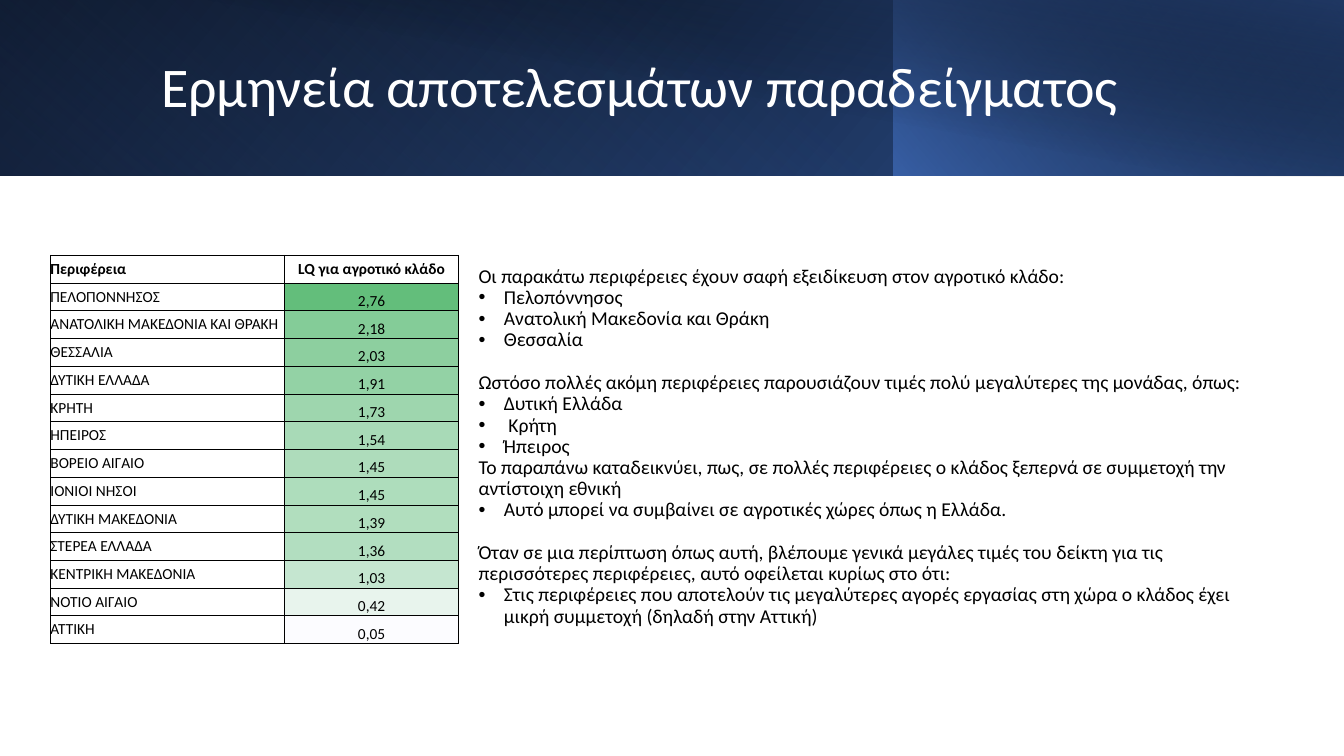
"""Build the slide that interprets the location quotient results."""
from lxml import etree
from pptx import Presentation
from pptx import util as u
from pptx.dml.color import RGBColor
from pptx.enum import shapes, text
from pptx.oxml.ns import qn

FONT = "Calibri"
WIDTH, HEIGHT = 33.87, 19.05
ROW_HEIGHT = 0.7
COLUMN_WIDTHS = (5.9, 4.39)

BANDS = [
    # left, width, height, rotation, flipped, angle, (position, colour, opacity)
    (0, WIDTH, 4.42, 0, True, 140, [(0, "000000", 100), (100, "2F5597", 100)]),
    (0, 22.55, 4.42, 180, True, 230, [(20, "4472C4", 0), (100, "203864", 55)]),
    (22.53, 11.34, 4.42, 0, True, 220, [(0, "4472C4", 66), (100, "000000", 30)]),
    (1.27, 32.6, 4.44, 0, False, 280, [(50, "000000", 0), (99, "203864", 52)]),
]

REGIONS = [
    ("ΠΕΛΟΠΟΝΝΗΣΟΣ", "2,76", "63BE7B"),
    ("ΑΝΑΤΟΛΙΚΗ ΜΑΚΕΔΟΝΙΑ ΚΑΙ ΘΡΑΚΗ", "2,18", "84CC98"),
    ("ΘΕΣΣΑΛΙΑ", "2,03", "8DCF9F"),
    ("ΔΥΤΙΚΗ ΕΛΛΑΔΑ", "1,91", "93D2A5"),
    ("ΚΡΗΤΗ", "1,73", "9ED6AE"),
    ("ΗΠΕΙΡΟΣ", "1,54", "A8DAB7"),
    ("ΒΟΡΕΙΟ ΑΙΓΑΙΟ", "1,45", "AEDCBB"),
    ("ΙΟΝΙΟΙ ΝΗΣΟΙ", "1,45", "AEDDBC"),
    ("ΔΥΤΙΚΗ ΜΑΚΕΔΟΝΙΑ", "1,39", "B1DEBE"),
    ("ΣΤΕΡΕΑ ΕΛΛΑΔΑ", "1,36", "B2DEC0"),
    ("ΚΕΝΤΡΙΚΗ ΜΑΚΕΔΟΝΙΑ", "1,03", "C5E6D0"),
    ("ΝΟΤΙΟ ΑΙΓΑΙΟ", "0,42", "E8F4ED"),
    ("ΑΤΤΙΚΗ", "0,05", "FCFCFF"),
]

FINDINGS = [
    ("Οι παρακάτω περιφέρειες έχουν σαφή εξειδίκευση στον αγροτικό κλάδο:",
     ["Πελοπόννησος", "Ανατολική Μακεδονία και Θράκη", "Θεσσαλία"], 0),
    ("Ωστόσο πολλές ακόμη περιφέρειες παρουσιάζουν τιμές πολύ μεγαλύτερες της μονάδας, όπως:",
     ["Δυτική Ελλάδα", " Κρήτη", "Ήπειρος"], 15.4),
    ("Το παραπάνω καταδεικνύει, πως, σε πολλές περιφέρειες ο κλάδος ξεπερνά σε συμμετοχή "
     "την αντίστοιχη εθνική",
     ["Αυτό μπορεί να συμβαίνει σε αγροτικές χώρες όπως η Ελλάδα."], 0),
    ("Όταν σε μια περίπτωση όπως αυτή, βλέπουμε γενικά μεγάλες τιμές του δείκτη για τις "
     "περισσότερες περιφέρειες, αυτό οφείλεται κυρίως στο ότι:",
     ["Στις περιφέρειες που αποτελούν τις μεγαλύτερες αγορές εργασίας στη χώρα ο κλάδος "
      "έχει μικρή συμμετοχή (δηλαδή στην Αττική)"], 15.4),
]


def color(value):
    """Turn a hex string into a colour."""
    return RGBColor.from_string(value)


def add_node(parent, tag, **attributes):
    """Append a drawing element to a parent."""
    node = etree.SubElement(parent, qn(tag))
    for name, value in attributes.items():
        node.set(name, str(value))
    return node


def style(paragraph, size, value="000000", bold=False):
    """Set the font of a whole paragraph."""
    font = paragraph.font
    font.name, font.size, font.bold = FONT, u.Pt(size), bold
    font.color.rgb = color(value)


def add_band(slide, left, width, height, rotation, flipped, angle, stops):
    """Add a gradient rectangle to the header."""
    shape = slide.shapes.add_shape(
        shapes.MSO_SHAPE.RECTANGLE, u.Cm(left), 0, u.Cm(width), u.Cm(height))
    shape.shadow.inherit = False
    shape.line.fill.background()
    shape.rotation = rotation
    properties = shape._element.spPr
    if flipped:
        properties.find(qn("a:xfrm")).set("flipH", "1")
    gradient = add_node(properties, "a:gradFill", rotWithShape=1)
    stop_list = add_node(gradient, "a:gsLst")
    for position, value, opacity in stops:
        stop = add_node(stop_list, "a:gs", pos=position * 1000)
        tint = add_node(stop, "a:srgbClr", val=color(value))
        if opacity < 100:
            add_node(tint, "a:alpha", val=opacity * 1000)
    add_node(gradient, "a:lin", ang=angle * 60000, scaled=0)
    properties.find(qn("a:prstGeom")).addnext(gradient)


def add_text_frame(slide, left, top, width, height, anchor):
    """Add a wrapping text box and return its frame."""
    box = slide.shapes.add_textbox(u.Cm(left), u.Cm(top), u.Cm(width), u.Cm(height))
    frame = box.text_frame
    frame.word_wrap = True
    frame.vertical_anchor = anchor
    return frame


def add_title(slide, title):
    """Add the slide title."""
    frame = add_text_frame(slide, 3.81, 0.81, 27.48, 2.87, text.MSO_ANCHOR.MIDDLE)
    paragraph = frame.paragraphs[0]
    paragraph.text = title
    paragraph.line_spacing = 0.9
    style(paragraph, 40, "FFFFFF")


def add_bullet(paragraph):
    """Give a paragraph a hanging bullet."""
    properties = paragraph._p.get_or_add_pPr()
    properties.set("marL", str(u.Cm(0.64)))
    properties.set("indent", str(-u.Cm(0.64)))
    add_node(properties, "a:buFont", typeface="Arial")
    add_node(properties, "a:buChar", char="•")


def add_findings(slide):
    """Add the statements with their bullets."""
    frame = add_text_frame(slide, 11.81, 6.59, 20.12, 10, text.MSO_ANCHOR.TOP)
    lines = []
    for statement, bullets, gap in FINDINGS:
        lines.append((statement, False, gap))
        lines.extend((bullet, True, 0) for bullet in bullets)
    for index, (line, bulleted, gap) in enumerate(lines):
        paragraph = frame.add_paragraph() if index else frame.paragraphs[0]
        paragraph.text = line
        paragraph.line_spacing = 0.9
        paragraph.space_before = u.Pt(gap)
        if bulleted:
            add_bullet(paragraph)
        style(paragraph, 14)


def fill_cell(cell, content, fill, anchor, alignment, bold):
    """Write, border and fill one table cell."""
    cell.margin_left = cell.margin_right = cell.margin_top = cell.margin_bottom = 0
    cell.vertical_anchor = anchor
    paragraph = cell.text_frame.paragraphs[0]
    paragraph.text = content
    paragraph.alignment = alignment
    style(paragraph, 11, bold=bold)
    properties = cell._tc.get_or_add_tcPr()
    for side in ("a:lnL", "a:lnR", "a:lnT", "a:lnB"):
        border = add_node(properties, side, w=u.Pt(0.5))
        add_node(add_node(border, "a:solidFill"), "a:srgbClr", val=color("000000"))
    cell.fill.solid()
    cell.fill.fore_color.rgb = color(fill)


def add_region_table(slide):
    """Add the table of quotients by region."""
    rows = [("Περιφέρεια", "LQ για αγροτικό κλάδο", "FFFFFF")] + REGIONS
    table = slide.shapes.add_table(
        len(rows), 2, u.Cm(1.27), u.Cm(6.43),
        u.Cm(sum(COLUMN_WIDTHS)), u.Cm(ROW_HEIGHT * len(rows))).table
    for column, width in zip(table.columns, COLUMN_WIDTHS):
        column.width = u.Cm(width)
    middle, bottom = text.MSO_ANCHOR.MIDDLE, text.MSO_ANCHOR.BOTTOM
    for index, (region, quotient, fill) in enumerate(rows):
        table.rows[index].height = u.Cm(ROW_HEIGHT)
        header = index == 0
        fill_cell(table.cell(index, 0), region, "FFFFFF", middle, text.PP_ALIGN.LEFT, header)
        fill_cell(table.cell(index, 1), quotient, fill, middle if header else bottom,
                  text.PP_ALIGN.CENTER, header)


def main():
    """Build and save the presentation."""
    presentation = Presentation()
    presentation.slide_width, presentation.slide_height = u.Cm(WIDTH), u.Cm(HEIGHT)
    slide = presentation.slides.add_slide(presentation.slide_layouts[6])
    for band in BANDS:
        add_band(slide, *band)
    add_title(slide, "Ερμηνεία αποτελεσμάτων παραδείγματος")
    add_findings(slide)
    add_region_table(slide)
    presentation.save("out.pptx")


if __name__ == "__main__":
    main()
